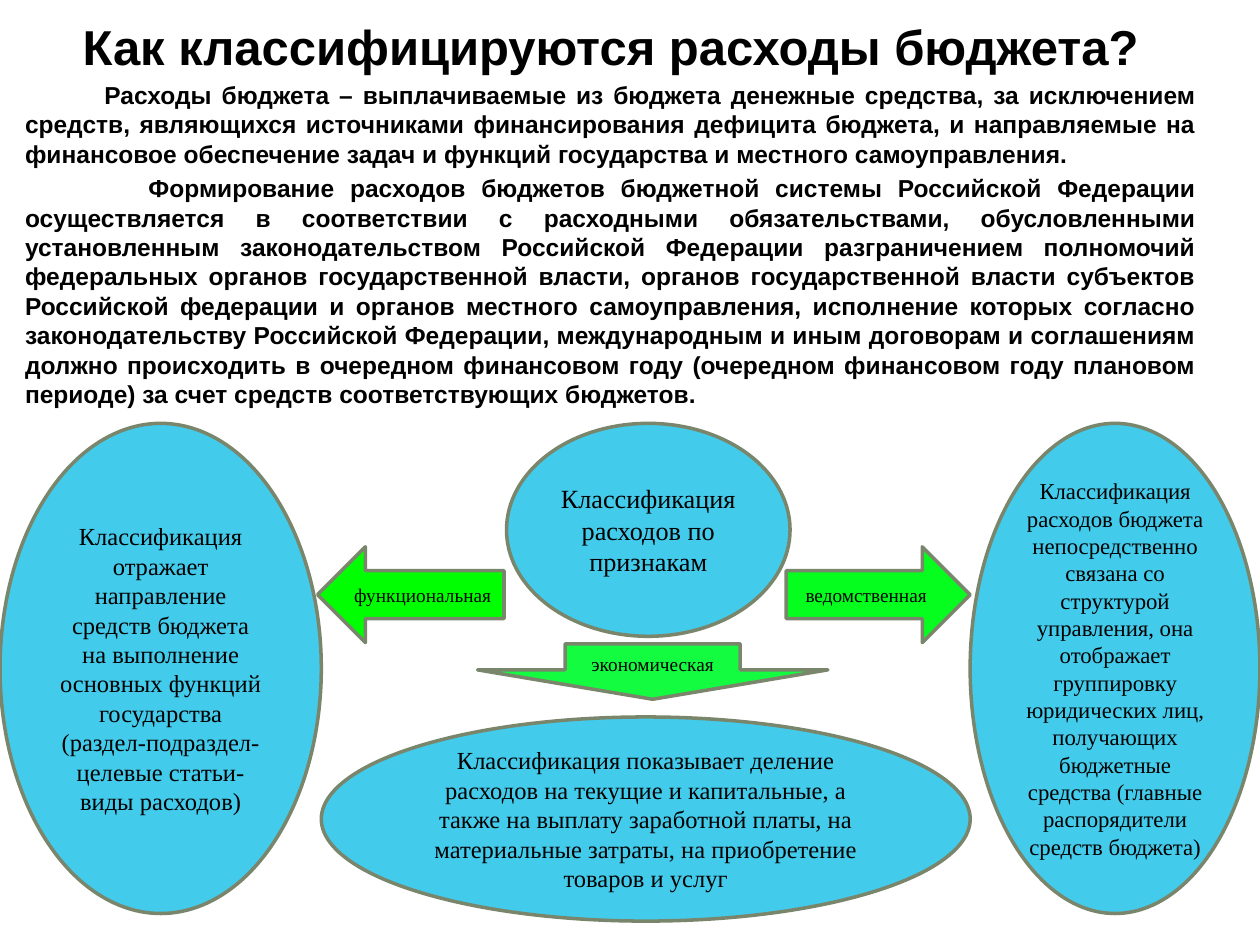
"""Build a slide on how budget expenditures are classified."""
from pptx import Presentation
from pptx.dml.color import RGBColor
from pptx.enum.shapes import MSO_SHAPE
from pptx.enum.text import MSO_ANCHOR, PP_ALIGN
from pptx.util import Inches, Pt

BLACK = RGBColor(0x00, 0x00, 0x00)
BLUE = RGBColor(0x43, 0xCB, 0xEB)
OUTLINE = RGBColor(0x7A, 0x86, 0x6C)
GREEN = RGBColor(0x00, 0xFF, 0x00)
GREEN_RIGHT = RGBColor(0x06, 0xFE, 0x1E)
GREEN_DOWN = RGBColor(0x14, 0xFC, 0x40)


def write(p, text, size=14, font="Times New Roman", bold=False,
          align=PP_ALIGN.CENTER, before=0, indent=0):
    p.alignment = align
    p.space_before = Pt(before)
    if indent:
        pPr = p._p.get_or_add_pPr()
        pPr.set("marL", "0")
        pPr.set("indent", str(Inches(indent)))
    r = p.add_run()
    r.text = text
    r.font.size = Pt(size)
    r.font.name = font
    r.font.bold = bold
    r.font.color.rgb = BLACK


prs = Presentation()
prs.slide_width, prs.slide_height = Inches(10), Inches(7.5)
s = prs.slides.add_slide(prs.slide_layouts[6])

tf = s.shapes.add_textbox(Inches(0.1), Inches(0.08), Inches(9.49), Inches(3.25)).text_frame
tf.word_wrap = True
write(tf.paragraphs[0], "Как классифицируются расходы бюджета?", size=28, font="Arial", bold=True)
body = [
    ("Расходы бюджета – выплачиваемые из бюджета денежные средства, за исключением "
     "средств, являющихся источниками финансирования дефицита бюджета, и направляемые на "
     "финансовое обеспечение задач и функций государства и местного самоуправления.", 0.63),
    ("Формирование расходов бюджетов бюджетной системы Российской Федерации "
     "осуществляется в соответствии с расходными обязательствами, обусловленными "
     "установленным законодательством Российской Федерации разграничением полномочий "
     "федеральных органов государственной власти, органов государственной власти субъектов "
     "Российской федерации и органов местного самоуправления, исполнение которых согласно "
     "законодательству Российской Федерации, международным и иным договорам и соглашениям "
     "должно происходить в очередном финансовом году (очередном финансовом году плановом "
     "периоде) за счет средств соответствующих бюджетов.", 0.98),
]
for text, indent in body:
    write(tf.add_paragraph(), text, font="Arial", bold=True,
          align=PP_ALIGN.JUSTIFY, before=2.8, indent=indent)

OVAL = MSO_SHAPE.OVAL
shapes = [
    (OVAL, 4.02, 3.36, 2.25, 1.69, BLUE, 15, "Классификация расходов по признакам"),
    (OVAL, 0, 3.36, 2.55, 3.89, BLUE, 14,
     "Классификация отражает направление средств бюджета на выполнение основных функций "
     "государства (раздел-подраздел-целевые статьи-виды расходов)"),
    (OVAL, 7.7, 3.36, 2.3, 3.89, BLUE, 13,
     "Классификация расходов бюджета непосредственно связана со структурой управления, она "
     "отображает группировку юридических лиц, получающих бюджетные средства (главные "
     "распорядители средств бюджета)"),
    (OVAL, 2.55, 5.69, 5.15, 1.62, BLUE, 14,
     "Классификация показывает деление расходов на текущие и капитальные, а также на выплату "
     "заработной платы, на материальные затраты, на приобретение товаров и услуг"),
    (MSO_SHAPE.DOWN_ARROW, 3.79, 5.11, 2.78, 0.44, GREEN_DOWN, 11, "экономическая"),
    (MSO_SHAPE.RIGHT_ARROW, 6.24, 4.34, 1.46, 0.76, GREEN_RIGHT, 11, "ведомственная"),
    (MSO_SHAPE.LEFT_ARROW, 2.52, 4.34, 1.48, 0.76, GREEN, 11, "функциональная"),
]
for kind, x, y, w, h, color, size, text in shapes:
    sp = s.shapes.add_shape(kind, Inches(x), Inches(y), Inches(w), Inches(h))
    sp.shadow.inherit = False
    sp.fill.solid()
    sp.fill.fore_color.rgb = color
    sp.line.color.rgb = OUTLINE
    sp.line.width = Pt(2)
    if kind == MSO_SHAPE.DOWN_ARROW:
        sp.adjustments[1] = 0.53
    tf = sp.text_frame
    tf.word_wrap = True
    tf.vertical_anchor = MSO_ANCHOR.MIDDLE
    write(tf.paragraphs[0], text, size=size)

prs.save("out.pptx")
